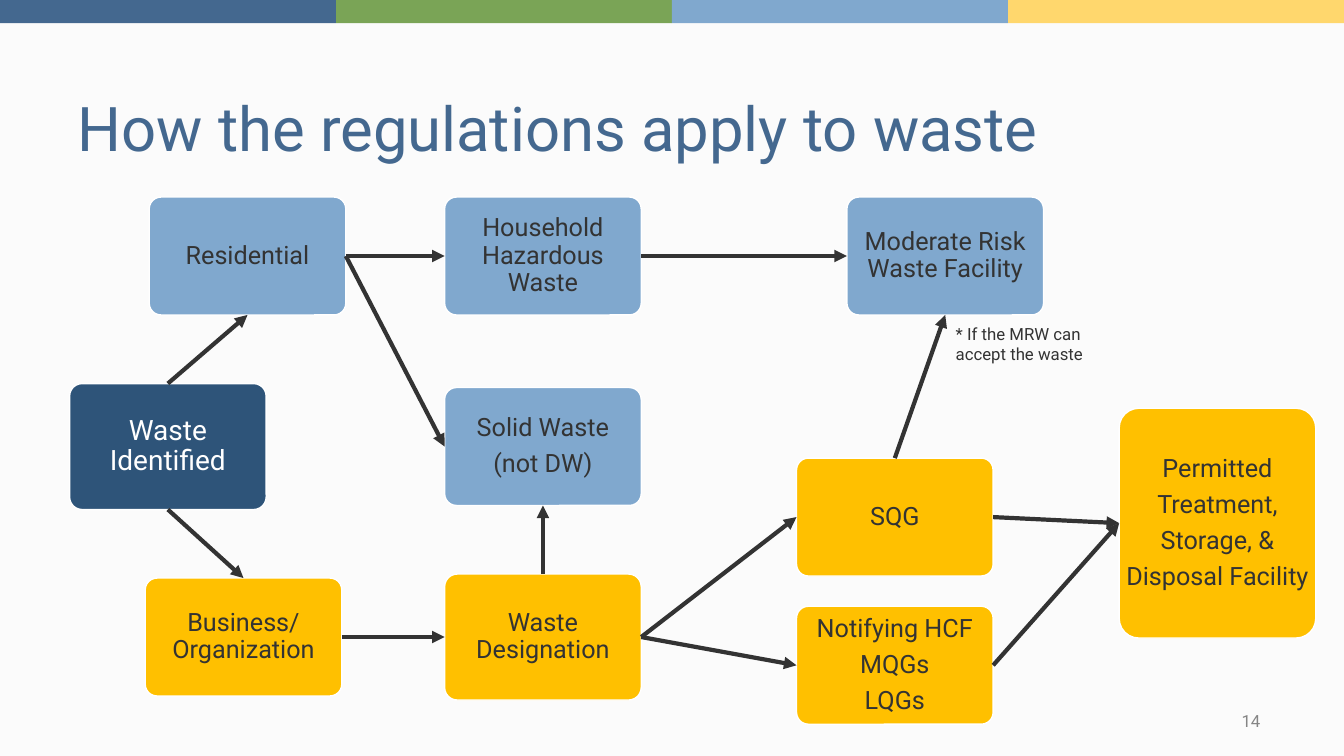
from lxml import etree
from pptx import Presentation
from pptx import util as u
from pptx.dml.color import RGBColor
from pptx.enum import shapes, text
from pptx.oxml.ns import qn

COLORS = {
    "background": "FBFBFB", "blue": "44688F", "green": "7AA456", "sky": "80A8CE",
    "yellow": "FFD76D", "navy": "2E5479", "amber": "FFC000", "ink": "333333",
    "gray": "858585", "white": "FFFFFF",
}
COLORS = {name: RGBColor.from_string(value) for name, value in COLORS.items()}

COLUMNS = {"start": 0.69, "source": 1.48, "business": 1.44, "waste": 4.41,
           "generator": 7.9, "moderate": 8.4, "permitted": 11.1}
ROWS = {"residential": 2.54, "middle": 4.43, "small": 5.13, "permitted": 5.19,
        "business": 6.32, "large": 6.6}
BOX_WIDTH, BOX_HEIGHT, TALL_HEIGHT = 1.95, 1.17, 1.25
TOP, LEFT, BOTTOM, RIGHT = range(4)


def write(shape, content, size, color, align, anchor, spacing=1.0, after=0):
    frame = shape.text_frame
    frame.text = content
    frame.word_wrap = True
    frame.vertical_anchor = anchor
    for paragraph in frame.paragraphs:
        paragraph.alignment = align
        paragraph.line_spacing = spacing
        paragraph.space_after = u.Pt(after)
        for run in paragraph.runs:
            run.font.name = "Roboto"
            run.font.size = u.Pt(size)
            run.font.color.rgb = COLORS[color]


presentation = Presentation()
presentation.slide_width = u.Inches(13.33)
presentation.slide_height = u.Inches(7.5)
slide = presentation.slides.add_slide(presentation.slide_layouts[6])
slide.background.fill.solid()
slide.background.fill.fore_color.rgb = COLORS["background"]

bands = ["blue", "green", "sky", "yellow"]
band_width = presentation.slide_width / len(bands)
for index, color in enumerate(bands):
    band = slide.shapes.add_shape(
        shapes.MSO_SHAPE.RECTANGLE, round(index * band_width), 0,
        round(band_width), u.Inches(0.23))
    band.shadow.inherit = False
    band.fill.solid()
    band.fill.fore_color.rgb = COLORS[color]
    band.line.fill.background()

LEFT_ALIGN, CENTER, RIGHT_ALIGN = text.PP_ALIGN.LEFT, text.PP_ALIGN.CENTER, text.PP_ALIGN.RIGHT
ANCHOR = text.MSO_ANCHOR
labels = [
    ((0.67, 0.43, 11.92, 1.25), "How the regulations apply to waste", 44, "blue",
     LEFT_ALIGN, ANCHOR.BOTTOM, 0.9),
    ((9.38, 3.16, 1.48, 0.5), "* If the MRW can accept the waste", 12, "ink",
     LEFT_ALIGN, ANCHOR.TOP, 1.0),
    ((9.6, 6.95, 3, 0.4), "14", 12, "gray", RIGHT_ALIGN, ANCHOR.MIDDLE, 1.0),
]
for area, content, size, color, align, anchor, spacing in labels:
    label = slide.shapes.add_textbox(*map(u.Inches, area))
    write(label, content, size, color, align, anchor, spacing)

steps = [
    ("identified", "start", "middle", TALL_HEIGHT, "navy", "Waste Identified"),
    ("residential", "source", "residential", BOX_HEIGHT, "sky", "Residential"),
    ("business", "business", "business", BOX_HEIGHT, "amber", "Business/ Organization"),
    ("household", "waste", "residential", BOX_HEIGHT, "sky", "Household Hazardous Waste"),
    ("solid", "waste", "middle", BOX_HEIGHT, "sky", "Solid Waste\n(not DW)"),
    ("designation", "waste", "business", TALL_HEIGHT, "amber", "Waste Designation"),
    ("moderate", "moderate", "residential", BOX_HEIGHT, "sky", "Moderate Risk Waste Facility"),
    ("small", "generator", "small", BOX_HEIGHT, "amber", "SQG"),
    ("large", "generator", "large", BOX_HEIGHT, "amber", "Notifying HCF\nMQGs\nLQGs"),
    ("permitted", "permitted", "permitted", 2.28, "amber",
     "Permitted\nTreatment,\nStorage, &\nDisposal Facility"),
]
boxes = {}
for name, column, row, height, color, content in steps:
    box = slide.shapes.add_shape(
        shapes.MSO_SHAPE.ROUNDED_RECTANGLE, u.Inches(COLUMNS[column]),
        u.Inches(ROWS[row] - height / 2), u.Inches(BOX_WIDTH), u.Inches(height))
    box.adjustments[0] = 0.1
    box.shadow.inherit = False
    box.fill.solid()
    box.fill.fore_color.rgb = COLORS[color]
    box.line.color.rgb = COLORS["white"]
    box.line.width = u.Pt(1)
    frame = box.text_frame
    frame.margin_left = frame.margin_right = u.Inches(0.01)
    frame.margin_top = frame.margin_bottom = u.Inches(0.01)
    size, ink = (20, "white") if color == "navy" else (18, "ink")
    write(box, content, size, ink, CENTER, ANCHOR.MIDDLE, 0.9, size * 0.35)
    boxes[name] = box

arrows = [
    ("identified", BOTTOM, "business", TOP),
    ("identified", TOP, "residential", BOTTOM),
    ("residential", RIGHT, "household", LEFT),
    ("household", RIGHT, "moderate", LEFT),
    ("residential", RIGHT, "solid", LEFT),
    ("business", RIGHT, "designation", LEFT),
    ("designation", TOP, "solid", BOTTOM),
    ("designation", RIGHT, "small", LEFT),
    ("designation", RIGHT, "large", LEFT),
    ("large", RIGHT, "permitted", LEFT),
    ("small", TOP, "moderate", BOTTOM),
    ("small", RIGHT, "permitted", LEFT),
]
for source, source_side, target, target_side in arrows:
    arrow = slide.shapes.add_connector(shapes.MSO_CONNECTOR.STRAIGHT, 0, 0, 0, 0)
    arrow.begin_connect(boxes[source], source_side)
    arrow.end_connect(boxes[target], target_side)
    arrow.line.color.rgb = COLORS["ink"]
    arrow.line.width = u.Pt(3)
    etree.SubElement(arrow.line._get_or_add_ln(), qn("a:tailEnd"), type="triangle")
    etree.SubElement(arrow._element.spPr, qn("a:effectLst"))

presentation.save("out.pptx")
